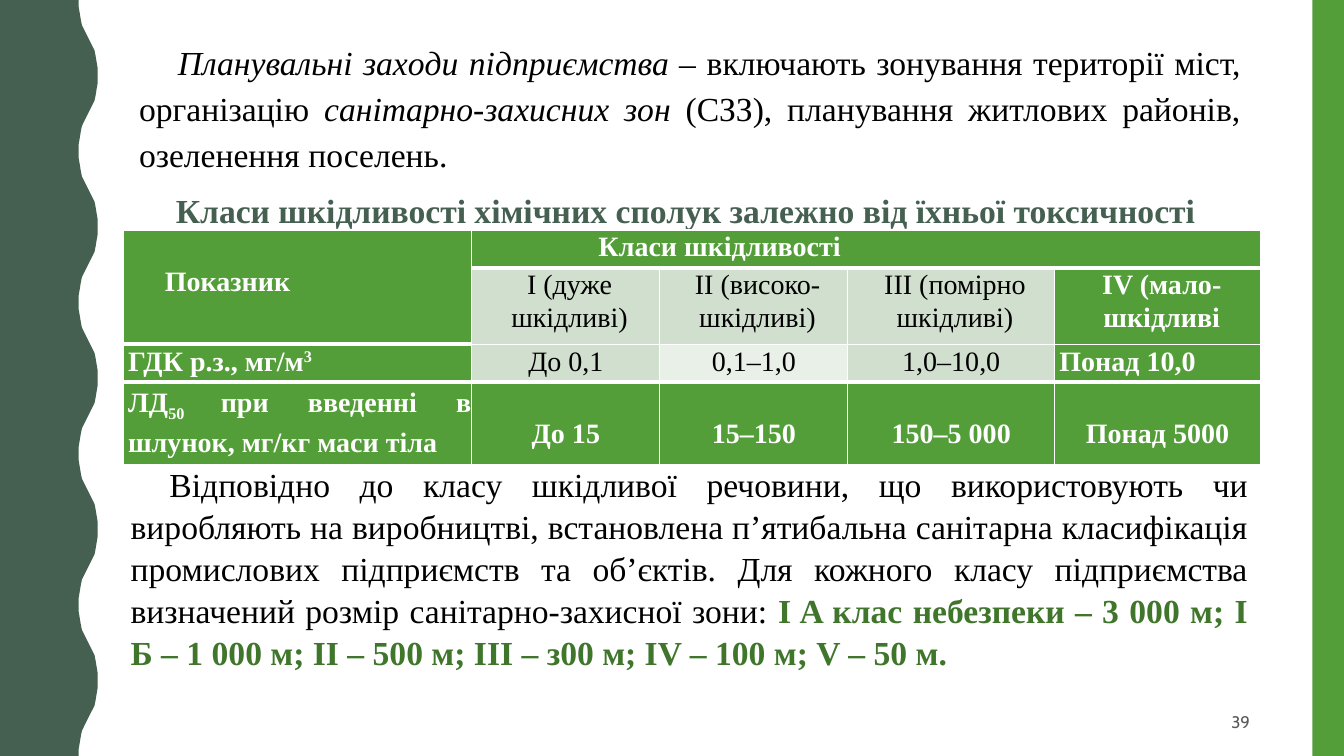
import dataclasses

import lxml.etree
import pptx
import pptx.dml.color
import pptx.enum.shapes
import pptx.enum.text
import pptx.oxml.ns
import pptx.util

PX = 9525
ALIGN = pptx.enum.text.PP_ALIGN
ANCHOR = pptx.enum.text.MSO_ANCHOR


@dataclasses.dataclass(frozen=True)
class Theme:
    """Colours, fonts and type sizes of the slide."""
    dark: str = "455F51"
    green: str = "549E39"
    deep: str = "3F762B"
    pale: str = "D1DFCE"
    paler: str = "E9F0E8"
    white: str = "FFFFFF"
    black: str = "000000"
    grey: str = "595959"
    serif: str = "Times New Roman"
    sans: str = "Cabin"
    body: int = 24
    cell: int = 20
    number: int = 12


THEME = Theme()
WAVE_LEFT, WAVE_DEPTH, HALF_WAVE = 75, 18, 72
HALF_PROFILE = [(0, 0), (0, 7), (1, 13), (2, 19), (3, 24), (5, 28), (7, 32),
                (9, 36), (11, 40), (13, 44), (15, 48), (16, 53), (17, 59), (18, 65)]
COLUMNS = [331, 179, 179, 197, 197]
ROWS = [36, 73, 36, 75]
BLANK_LINE = 33
THICK_TOP, THICK_BOTTOM = {1, 3}, {(0, 0), (0, 1), (0, 2), (0, 3), (0, 4), (1, 0),
                                   (2, 0), (2, 1), (2, 2), (2, 3), (2, 4)}

INTRO = [
    ("Планувальні захoдu nідnрuємства –", {"italic": True}),
    (" включають зонування території міст, організацію ", {}),
    ("cаніmарнo-захucнuх зoн", {"italic": True}),
    (" (CЗЗ), планування житлових районів, озеленення поселень.", {}),
]
HEADING = [("Класи шкідливості хімічних сполук залежно від ïхньоï токсичності ", {"bold": True})]
CLOSING = [
    ("Відповідно до класу шкідливої речовини, що використовують чи виробляють на "
     "виробництві, встановлена п’ятибальна санітарна класифікація промислових підприємств "
     "та об’єктів. Для кожного класу підприємства визначений розмір санітарно-захисної зони: ", {}),
    ("I A клас небезпеки – 3 000 м; I Б – 1 000 м; II – 500 м; III – з00 м; "
     "IV – 100 м; V – 50 м.", {"bold": True, "color": THEME.deep}),
]
LEFT, CENTER, JUSTIFY = ALIGN.LEFT, ALIGN.CENTER, ALIGN.JUSTIFY
CELLS = {
    (0, 0): ("Показник", THEME.green, LEFT, 39, BLANK_LINE),
    (0, 1): ("Класи шкідливості", THEME.green, LEFT, 121, 0),
    (1, 1): ("I (дуже шкідливі)", THEME.pale, CENTER, 8, 0),
    (1, 2): ("II (високо- шкідливі)", THEME.pale, CENTER, 8, 0),
    (1, 3): ("III (помірно шкідливі)", THEME.pale, CENTER, 8, 0),
    (1, 4): ("IV (мало- шкідливі", THEME.green, CENTER, 8, 0),
    (2, 0): ([("ГДК р.з., мг/м", {}), ("3", {"baseline": 30000})], THEME.green, LEFT, 4, 0),
    (2, 1): ("До 0,1", THEME.pale, CENTER, 1, 0),
    (2, 2): ("0,1–1,0", THEME.paler, CENTER, 1, 0),
    (2, 3): ("1,0–10,0", THEME.pale, CENTER, 1, 0),
    (2, 4): ("Понад 10,0", THEME.green, LEFT, 5, 0),
    (3, 0): ([("ЛД", {}), ("50 ", {"baseline": -25000}),
              ("при введенні в шлунок, мг/кг маси тіла", {})], THEME.green, JUSTIFY, 4, 0),
    (3, 1): ("До 15", THEME.green, CENTER, 1, BLANK_LINE),
    (3, 2): ("15–150", THEME.green, CENTER, 1, BLANK_LINE),
    (3, 3): ("150–5 000", THEME.green, CENTER, 1, BLANK_LINE),
    (3, 4): ("Понад 5000", THEME.green, CENTER, 0, BLANK_LINE),
}


def rgb(value):
    """Turn a hex string into a colour."""
    return pptx.dml.color.RGBColor.from_string(value)


def scaled(box):
    """Turn px lengths into EMU."""
    return [length * PX for length in box]


def paint(shape, color):
    """Give a shape a flat fill without line or shadow."""
    shape.fill.solid()
    shape.fill.fore_color.rgb = rgb(color)
    shape.line.fill.background()
    shape.shadow.inherit = False


def write(para, spans, font, layout, margin=0, indent=0):
    """Fill a paragraph with formatted spans."""
    for name, value in layout.items():
        setattr(para, name, value)
    properties = para._p.get_or_add_pPr()
    properties.set("marL", str(margin * PX))
    properties.set("indent", str(indent * PX))
    for text, changes in spans:
        span = para.add_run()
        span.text = text
        formats = {**font, **changes}
        span.font.color.rgb = rgb(formats.pop("color"))
        baseline = formats.pop("baseline", None)
        if baseline:
            span.font._element.set("baseline", str(baseline))
        for name, value in formats.items():
            setattr(span.font, name, value)


def add_text_frame(page, box, anchor):
    """Add a wrapping text box and return its frame."""
    frame = page.shapes.add_textbox(*scaled(box)).text_frame
    frame.word_wrap = True
    frame.vertical_anchor = anchor
    return frame


def add_wave(page, box):
    """Draw the wavy band in the box at the left edge."""
    left, top, _, height = box
    points = [(left + WAVE_LEFT, top)]
    for half in range(height // HALF_WAVE):
        for across, down in HALF_PROFILE:
            offset = WAVE_DEPTH - across if half % 2 else across
            points.append((left + WAVE_LEFT + offset, top + half * HALF_WAVE + down))
    points += [(left + WAVE_LEFT, top + height), (left, top + height)]
    builder = page.shapes.build_freeform(left, top, scale=PX)
    builder.add_line_segments(points, close=True)
    paint(builder.convert_to_shape(), THEME.dark)


def add_stripe(page, box):
    """Draw the plain band at the right edge."""
    stripe = page.shapes.add_shape(pptx.enum.shapes.MSO_SHAPE.RECTANGLE, *scaled(box))
    paint(stripe, THEME.green)


def add_intro(page, box):
    """Write the opening paragraph and the table heading."""
    frame = add_text_frame(page, box, ANCHOR.TOP)
    font = {"name": THEME.serif, "size": pptx.util.Pt(THEME.body), "color": THEME.black}
    layout = {"line_spacing": 1.15, "space_before": pptx.util.Pt(7)}
    write(frame.paragraphs[0], INTRO, font, {**layout, "alignment": JUSTIFY}, indent=37)
    write(frame.add_paragraph(), HEADING, {**font, "color": THEME.dark},
          {**layout, "alignment": CENTER})


def add_border(cell, side, width):
    """Draw one white edge of a cell."""
    line = lxml.etree.SubElement(cell._tc.get_or_add_tcPr(), pptx.oxml.ns.qn("a:" + side),
                                 w=str(pptx.util.Pt(width)))
    fill = lxml.etree.SubElement(line, pptx.oxml.ns.qn("a:solidFill"))
    lxml.etree.SubElement(fill, pptx.oxml.ns.qn("a:srgbClr"), val=THEME.white)


def add_hazard_table(page, box):
    """Build the table of hazard classes."""
    table = page.shapes.add_table(len(ROWS), len(COLUMNS), *scaled(box)).table
    for column, width in zip(table.columns, COLUMNS):
        column.width = width * PX
    for row, height in zip(table.rows, ROWS):
        row.height = height * PX
    table.cell(0, 0).merge(table.cell(1, 0))
    table.cell(0, 1).merge(table.cell(0, 4))
    for row in range(len(ROWS)):
        for column in range(len(COLUMNS)):
            cell = table.cell(row, column)
            widths = {"lnL": 1, "lnR": 1, "lnT": 3 if row in THICK_TOP else 1,
                      "lnB": 3 if (row, column) in THICK_BOTTOM else 1}
            for side, width in widths.items():
                add_border(cell, side, width)
            content, fill, align, margin, top = CELLS.get((row, column), ([], THEME.green, LEFT, 0, 0))
            cell.fill.solid()
            cell.fill.fore_color.rgb = rgb(fill)
            insets = {"margin_left": 0, "margin_right": 0, "margin_top": top * PX, "margin_bottom": 0}
            for name, value in insets.items():
                setattr(cell, name, value)
            strong = fill == THEME.green
            font = {"name": THEME.serif, "size": pptx.util.Pt(THEME.cell), "bold": strong,
                    "color": THEME.white if strong else THEME.black}
            layout = {"alignment": align, "space_before": pptx.util.Pt(0.5),
                      "line_spacing": 1.15 if align == JUSTIFY else 1.06}
            spans = [(content, {})] if isinstance(content, str) else content
            write(cell.text_frame.paragraphs[0], spans, font, layout, margin)


def add_closing(page, box):
    """Write the paragraph on protective zones."""
    frame = add_text_frame(page, box, ANCHOR.MIDDLE)
    font = {"name": THEME.serif, "size": pptx.util.Pt(THEME.body), "color": THEME.black}
    write(frame.paragraphs[0], CLOSING, font, {"alignment": JUSTIFY, "line_spacing": 1.04}, indent=37)


def add_page_number(page, box):
    """Write the page number."""
    frame = add_text_frame(page, box, ANCHOR.MIDDLE)
    font = {"name": THEME.sans, "size": pptx.util.Pt(THEME.number), "color": THEME.grey}
    write(frame.paragraphs[0], [("39", {})], font, {"alignment": ALIGN.RIGHT})


def main():
    """Build and save the deck."""
    deck = pptx.Presentation()
    deck.slide_width, deck.slide_height = scaled((1280, 720))
    page = deck.slides.add_slide(deck.slide_layouts[6])
    add_wave(page, (0, 0, 93, 720))
    add_stripe(page, (1250, 0, 30, 720))
    add_intro(page, (123, 29, 1068, 558))
    add_page_number(page, (904, 669, 296, 36))
    add_hazard_table(page, (118, 219, sum(COLUMNS), sum(ROWS)))
    add_closing(page, (115, 438, 1083, 204))
    deck.save("out.pptx")


if __name__ == "__main__":
    main()
